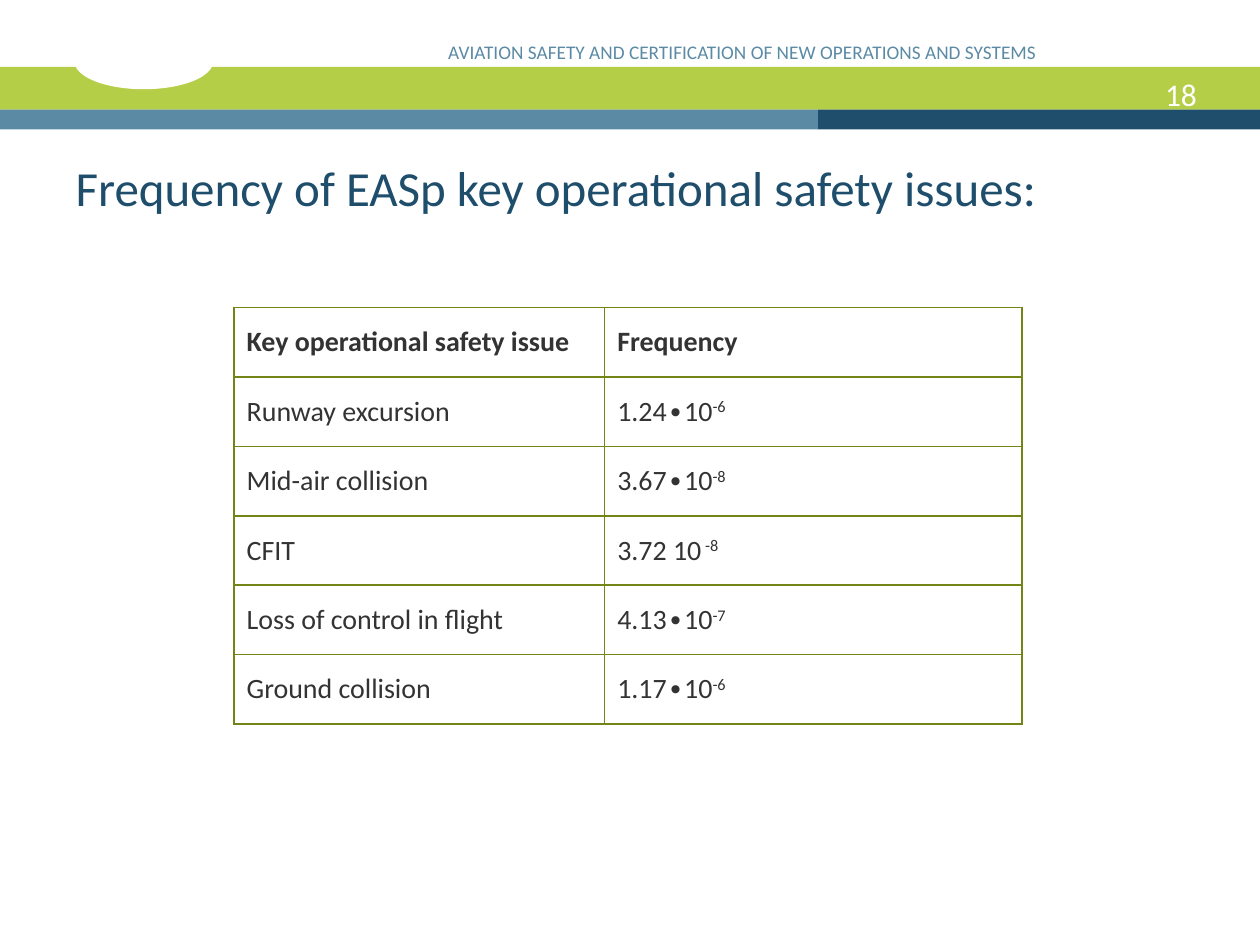
import pptx
import pptx.dml.color
import pptx.enum.shapes
import pptx.enum.text
import pptx.oxml
import pptx.oxml.ns
import pptx.util
from dataclasses import dataclass

Cm, Pt = pptx.util.Cm, pptx.util.Pt
Align = pptx.enum.text.PP_ALIGN
Anchor = pptx.enum.text.MSO_ANCHOR
Shape = pptx.enum.shapes.MSO_SHAPE


@dataclass(frozen=True)
class Theme:
    font: str = "Calibri"
    white: str = "FFFFFF"
    lime: str = "B5CE48"
    navy: str = "1E4E6B"
    steel: str = "5B8AA5"
    ink: str = "333333"
    rule: str = "728617"
    title: int = 28
    page: int = 18
    cell: int = 16
    head: int = 11


THEME = Theme()

# Issue, factor and exponent
ISSUES = [
    ("Runway excursion", "1.24∙10", "-6"),
    ("Mid-air collision", "3.67∙10", "-8"),
    ("CFIT", "3.72 10", " -8"),
    ("Loss of control in flight", "4.13∙10", "-7"),
    ("Ground collision", "1.17∙10", "-6"),
]


def rgb(code):
    return pptx.dml.color.RGBColor.from_string(code)


def write(frame, text, size, color, bold=False, align=Align.LEFT, power=""):
    """Put text in a frame, with an optional raised exponent."""
    para = frame.paragraphs[0]
    para.alignment = align
    for part in filter(None, (text, power)):
        run = para.add_run()
        run.text = part
        font = run.font
        font.name, font.size, font.bold = THEME.font, Pt(size), bold
        font.color.rgb = rgb(color)
    if power:
        run._r.get_or_add_rPr().set("baseline", "30000")


def block(slide, kind, color, left, top, width, height):
    shape = slide.shapes.add_shape(kind, Cm(left), Cm(top), Cm(width), Cm(height))
    shape.shadow.inherit = False
    shape.fill.solid()
    shape.fill.fore_color.rgb = rgb(color)
    shape.line.fill.background()


def label(slide, text, left, top, width, height, **style):
    """Right-aligned text that sits on the bottom of its box."""
    box = slide.shapes.add_textbox(Cm(left), Cm(top), Cm(width), Cm(height))
    frame = box.text_frame
    frame.word_wrap = True
    frame.vertical_anchor = Anchor.BOTTOM
    frame.margin_right = 0
    write(frame, text, align=Align.RIGHT, **style)


def headline(slide, text):
    title = slide.shapes.title
    title.left, title.top = Cm(1.27), Cm(2.92)
    title.width, title.height = Cm(22.86), Cm(1.57)
    frame = title.text_frame
    frame.auto_size = pptx.enum.text.MSO_AUTO_SIZE.NONE
    frame.vertical_anchor = Anchor.BOTTOM
    write(frame, text, THEME.title, THEME.navy)


def border(cell):
    props = cell._tc.get_or_add_tcPr()
    for side in ("lnL", "lnR", "lnT", "lnB"):
        props.append(pptx.oxml.parse_xml(
            f'<a:{side} {pptx.oxml.ns.nsdecls("a")} w="{Pt(1)}"><a:solidFill>'
            f'<a:srgbClr val="{THEME.rule}"/></a:solidFill></a:{side}>'))


def grid(slide, rows, left, top, widths, height):
    """Ruled table whose first row is the header."""
    frame = slide.shapes.add_table(
        len(rows), len(widths), Cm(left), Cm(top),
        Cm(sum(widths)), Cm(height * len(rows)))
    table = frame.table
    table.first_row = table.horz_banding = False
    for col, width in zip(table.columns, widths):
        col.width = Cm(width)
    for r, (issue, value, power) in enumerate(rows):
        table.rows[r].height = Cm(height)
        for c, (text, raised) in enumerate([(issue, ""), (value, power)]):
            cell = table.cell(r, c)
            border(cell)
            cell.fill.background()
            cell.vertical_anchor = Anchor.MIDDLE
            write(cell.text_frame, text, THEME.cell, THEME.ink,
                  bold=r == 0, power=raised)


def main():
    deck = pptx.Presentation()
    deck.slide_width, deck.slide_height = Cm(25.4), Cm(19.05)
    slide = deck.slides.add_slide(deck.slide_layouts[5])

    # Header bands
    block(slide, Shape.RECTANGLE, THEME.lime, 0, 1.35, 25.4, 0.86)
    block(slide, Shape.RECTANGLE, THEME.navy, 16.49, 2.21, 8.91, 0.4)
    block(slide, Shape.RECTANGLE, THEME.steel, 0, 2.21, 16.49, 0.4)
    block(slide, Shape.OVAL, THEME.white, 1.5, 0.68, 2.8, 1.12)

    # Page number, title and running head
    label(slide, "18", 22.02, 1.37, 2.11, 1.02,
          size=THEME.page, color=THEME.white)
    headline(slide, "Frequency of EASp key operational safety issues:")
    label(slide, "AVIATION SAFETY AND CERTIFICATION OF NEW OPERATIONS AND SYSTEMS",
          7.49, 0.13, 13.41, 1.27, size=THEME.head, color=THEME.steel)

    # Frequency table
    header = ("Key operational safety issue", "Frequency", "")
    grid(slide, [header] + ISSUES, 4.72, 6.2, (7.47, 8.41), 1.4)

    deck.save("out.pptx")


if __name__ == "__main__":
    main()
